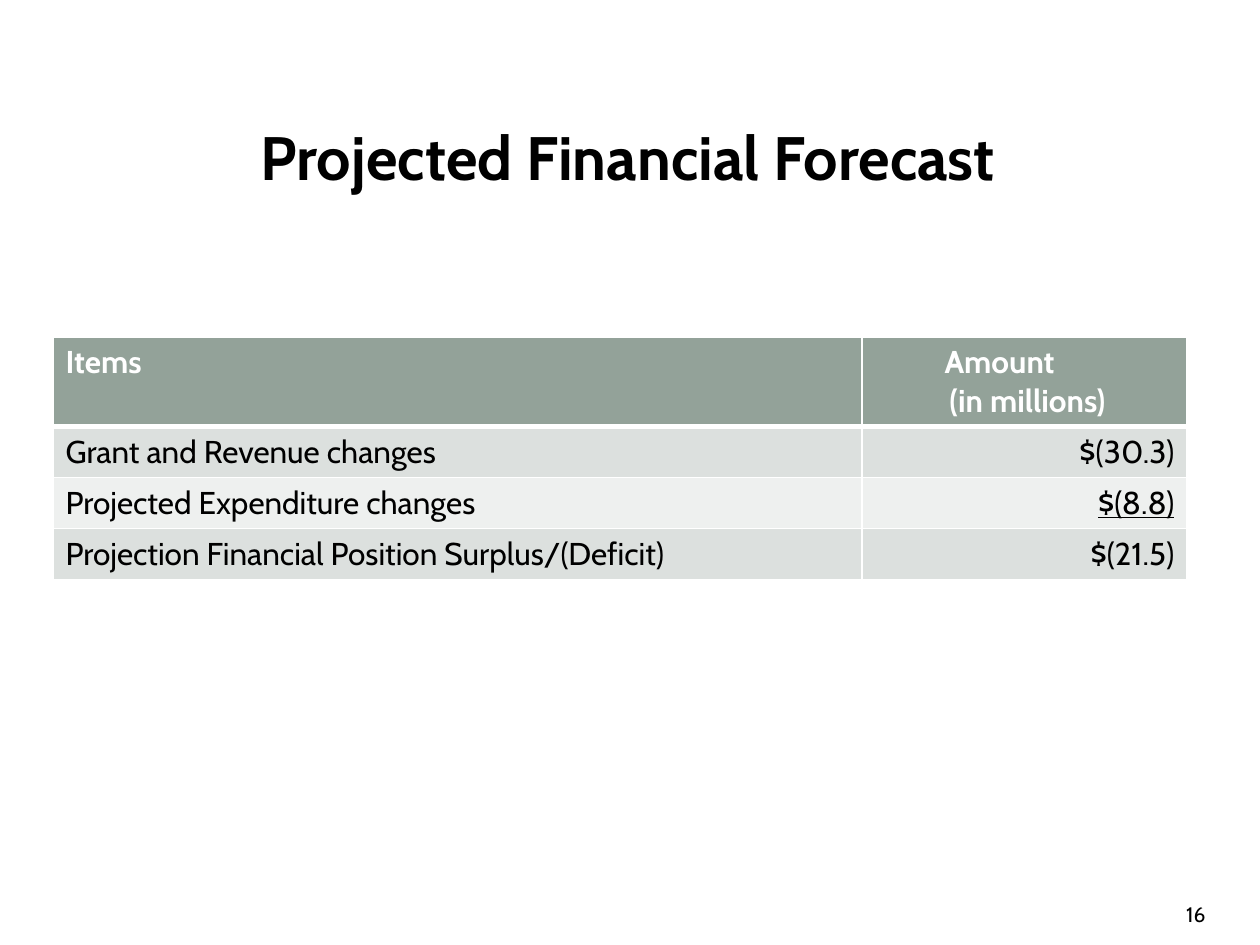
from dataclasses import dataclass
from typing import NamedTuple

from lxml import etree
from pptx import Presentation
from pptx import util as u
from pptx.dml.color import RGBColor
from pptx.enum import text
from pptx.oxml.ns import qn

PX_PER_INCH = 126


@dataclass(frozen=True)
class Theme:
    font: str = "Cabin"
    ink: str = "000000"
    paper: str = "FFFFFF"
    header: str = "93A299"
    bands: tuple[str, str] = ("DCE0DE", "EEF0EF")
    title_pt: int = 35
    table_pt: int = 18
    number_pt: int = 12


class Box(NamedTuple):
    left: int
    top: int
    width: int
    height: int


class Line(NamedTuple):
    words: str
    align: text.PP_ALIGN = text.PP_ALIGN.LEFT
    indent: int = 0
    underline: bool = False


class Item(NamedTuple):
    label: str
    amount: str
    underline: bool = False


THEME = Theme()
ALIGN = text.PP_ALIGN
TITLE = Box(59, 84, 1138, 144)
TABLE = Box(53, 337, 1134, 241)
NUMBER = Box(1071, 882, 147, 45)
COLUMNS = (809, 325)
HEADER_HEIGHT, ROW_HEIGHT = 88, 51
ITEMS = (
    Item("Grant and Revenue changes", "$(30.3)"),
    Item("Projected Expenditure changes", "$(8.8)", underline=True),
    Item("Projection Financial Position Surplus/(Deficit)", "$(21.5)"),
)


def px(n: int) -> u.Emu:
    return u.Emu(round(n * u.Inches(1) / PX_PER_INCH))


def write(tf, lines: list[Line], size: int, color: str, bold: bool = False) -> None:
    for i, line in enumerate(lines):
        p = tf.paragraphs[0] if i == 0 else tf.add_paragraph()
        p.alignment = line.align
        if line.indent:
            p._p.get_or_add_pPr().set("marL", str(px(line.indent)))
        r = p.add_run()
        r.text = line.words
        font = {"name": THEME.font, "size": u.Pt(size),
                "bold": bold, "underline": line.underline}
        for name, value in font.items():
            setattr(r.font, name, value)
        r.font.color.rgb = RGBColor.from_string(color)


def set_borders(cell, top: int, bottom: int) -> None:
    """Draw the four cell edges; top and bottom are widths in points."""
    tc_pr = cell._tc.get_or_add_tcPr()
    widths = {"a:lnL": 1, "a:lnR": 1, "a:lnT": top, "a:lnB": bottom}
    for i, (tag, width) in enumerate(widths.items()):
        ln = etree.Element(qn(tag), w=str(u.Pt(width)))
        fill = etree.SubElement(ln, qn("a:solidFill"))
        etree.SubElement(fill, qn("a:srgbClr"), val=THEME.paper)
        tc_pr.insert(i, ln)


def fill_cell(cell, lines: list[Line], row: int) -> None:
    is_header = row == 0
    background = THEME.header if is_header else THEME.bands[(row - 1) % 2]
    cell.fill.solid()
    cell.fill.fore_color.rgb = RGBColor.from_string(background)
    set_borders(cell, top=3 if row == 1 else 1, bottom=3 if is_header else 1)
    write(cell.text_frame, lines, THEME.table_pt,
          THEME.paper if is_header else THEME.ink, bold=is_header)


def add_title(s) -> None:
    title = s.shapes.title
    for name, value in TITLE._asdict().items():
        setattr(title, name, px(value))
    tf = title.text_frame
    tf.vertical_anchor = text.MSO_ANCHOR.MIDDLE
    write(tf, [Line("Projected Financial Forecast", ALIGN.CENTER)],
          THEME.title_pt, THEME.ink, bold=True)


def add_forecast_table(s) -> None:
    rows = [([Line("Items")],
             [Line("Amount", indent=70), Line("(in millions)", ALIGN.CENTER, indent=6)])]
    rows += [([Line(item.label)],
              [Line(item.amount, ALIGN.RIGHT, underline=item.underline)])
             for item in ITEMS]
    table = s.shapes.add_table(len(rows), len(COLUMNS), *map(px, TABLE)).table
    table.horz_banding = False
    for column, width in zip(table.columns, COLUMNS):
        column.width = px(width)
    for i, cells in enumerate(rows):
        table.rows[i].height = px(ROW_HEIGHT if i else HEADER_HEIGHT)
        for j, lines in enumerate(cells):
            fill_cell(table.cell(i, j), lines, i)


def add_page_number(s) -> None:
    tf = s.shapes.add_textbox(*map(px, NUMBER)).text_frame
    frame = {"word_wrap": True, "margin_bottom": 0,
             "vertical_anchor": text.MSO_ANCHOR.BOTTOM}
    for name, value in frame.items():
        setattr(tf, name, value)
    write(tf, [Line("16", ALIGN.RIGHT)], THEME.number_pt, THEME.ink)


def main() -> None:
    prs = Presentation()
    prs.slide_width, prs.slide_height = u.Inches(10), u.Inches(7.5)
    s = prs.slides.add_slide(prs.slide_layouts.get_by_name("Title Only"))
    add_title(s)
    add_forecast_table(s)
    add_page_number(s)
    prs.save("out.pptx")


if __name__ == "__main__":
    main()
